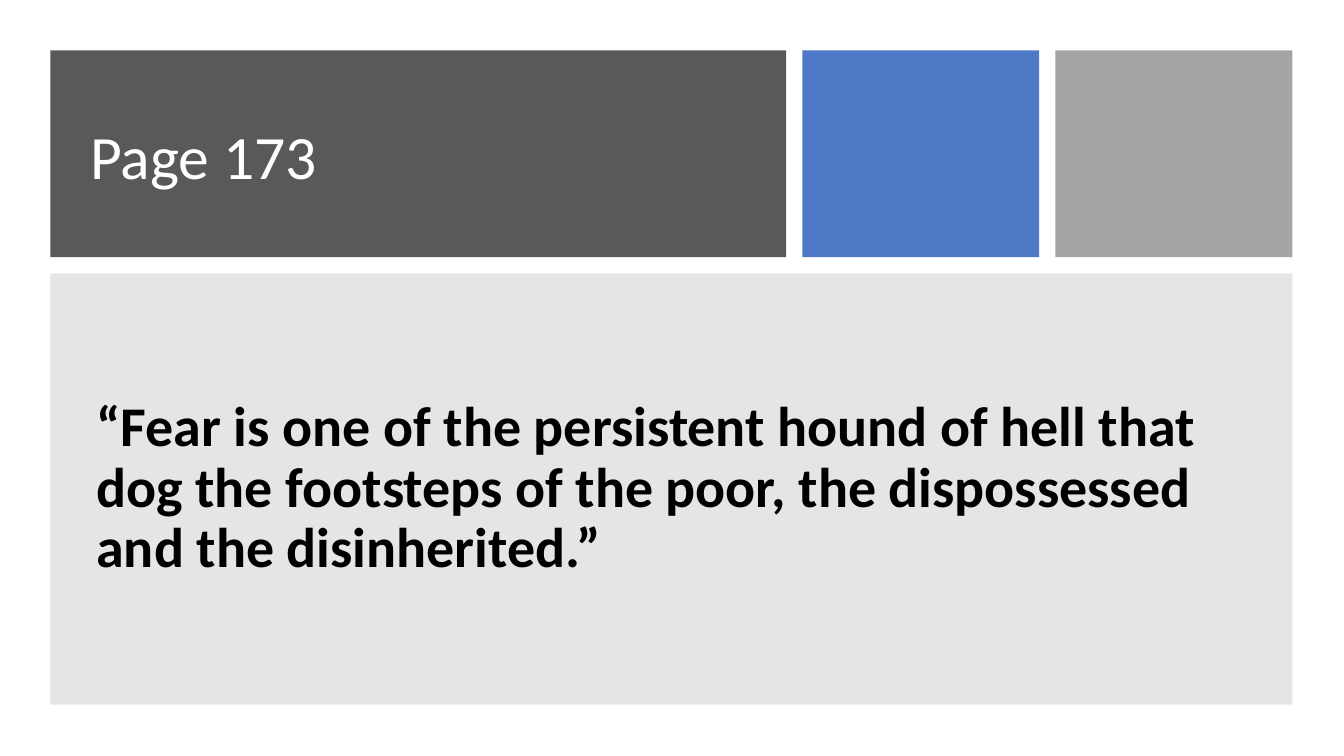
"""Build a quotation slide with a row of header blocks above a quote panel."""
from dataclasses import dataclass

from lxml import etree
from pptx import Presentation
from pptx.dml.color import RGBColor
from pptx.enum.shapes import MSO_SHAPE
from pptx.enum.text import MSO_ANCHOR
from pptx.oxml.ns import qn
from pptx.slide import Slide
from pptx.util import Cm, Pt

RECTANGLE = MSO_SHAPE.RECTANGLE
MIDDLE = MSO_ANCHOR.MIDDLE

WHITE = RGBColor(0xFF, 0xFF, 0xFF)
BLACK = RGBColor(0x00, 0x00, 0x00)
DARK_GRAY = RGBColor(0x59, 0x59, 0x59)
BLUE = RGBColor(0x44, 0x72, 0xC4)
LIGHT_GRAY = RGBColor(0xA5, 0xA5, 0xA5)
MID_GRAY = RGBColor(0x80, 0x80, 0x80)

FONT = "Calibri"
MARGIN = 1.27
GAP = 0.41
TITLE_WIDTH = 18.54
ACCENT_WIDTH = 5.97
HEADER_HEIGHT = 5.21
QUOTE_HEIGHT = 10.87
FULL_WIDTH = TITLE_WIDTH + 2 * (GAP + ACCENT_WIDTH)


@dataclass
class Panel:
    left: float
    top: float
    width: float
    height: float
    color: RGBColor
    opacity: int = 100


@dataclass
class Label:
    left: float
    top: float
    width: float
    height: float
    text: str
    size: int
    color: RGBColor
    bold: bool = False
    space_before: int = 0


BLUE_LEFT = MARGIN + TITLE_WIDTH + GAP
GRAY_LEFT = BLUE_LEFT + ACCENT_WIDTH + GAP
QUOTE_TOP = MARGIN + HEADER_HEIGHT + GAP

PANELS = [
    Panel(MARGIN, MARGIN, TITLE_WIDTH, HEADER_HEIGHT, DARK_GRAY),
    Panel(BLUE_LEFT, MARGIN, ACCENT_WIDTH, HEADER_HEIGHT, BLUE, 95),
    Panel(GRAY_LEFT, MARGIN, ACCENT_WIDTH, HEADER_HEIGHT, LIGHT_GRAY),
    Panel(MARGIN, QUOTE_TOP, FULL_WIDTH, QUOTE_HEIGHT, MID_GRAY, 20),
]

LABELS = [
    Label(2.03, 2.03, 16.92, 3.96, "Page 173", 44, WHITE),
    Label(
        2.18, 7.77, 29.44, 9.12,
        "“Fear is one of the persistent hound of hell that dog the footsteps "
        "of the poor, the dispossessed and the disinherited.”",
        40, BLACK, bold=True, space_before=10,
    ),
]


def add_panel(s: Slide, panel: Panel) -> None:
    sp = s.shapes.add_shape(
        RECTANGLE, Cm(panel.left), Cm(panel.top), Cm(panel.width), Cm(panel.height)
    )
    sp.shadow.inherit = False
    sp.line.fill.background()
    sp.fill.solid()
    sp.fill.fore_color.rgb = panel.color
    if panel.opacity < 100:
        color = sp.fill._xPr.find(qn("a:solidFill"))[0]
        etree.SubElement(color, qn("a:alpha")).set("val", str(panel.opacity * 1000))


def add_label(s: Slide, label: Label) -> None:
    sp = s.shapes.add_textbox(
        Cm(label.left), Cm(label.top), Cm(label.width), Cm(label.height)
    )
    tf = sp.text_frame
    tf.word_wrap = True
    tf.vertical_anchor = MIDDLE
    tf.text = label.text
    p = tf.paragraphs[0]
    p.line_spacing = 0.9
    p.space_before = Pt(label.space_before)
    r = p.runs[0]
    r.font.name = FONT
    r.font.size = Pt(label.size)
    r.font.bold = label.bold
    r.font.color.rgb = label.color


def main() -> None:
    prs = Presentation()
    prs.slide_width, prs.slide_height = Cm(33.87), Cm(19.05)
    s = prs.slides.add_slide(prs.slide_layouts[6])
    for panel in PANELS:
        add_panel(s, panel)
    for label in LABELS:
        add_label(s, label)
    prs.save("out.pptx")


if __name__ == "__main__":
    main()
